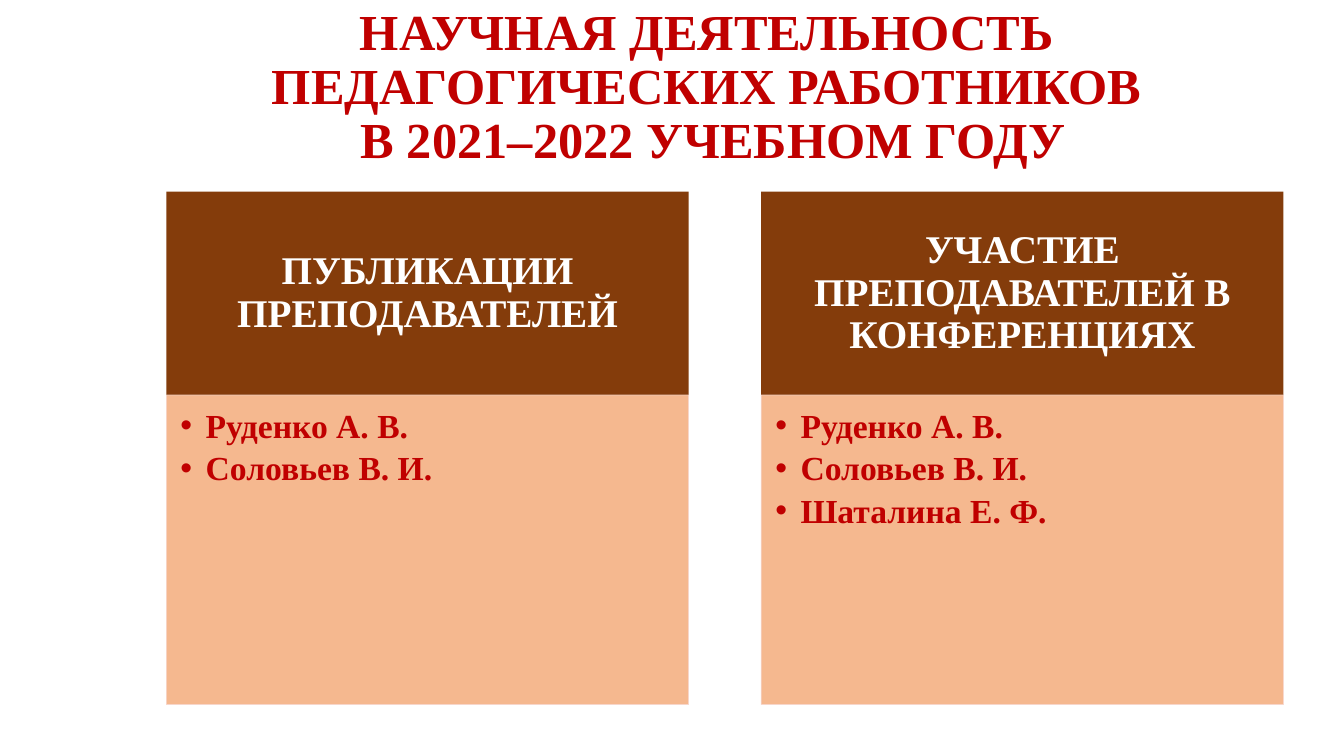
"""Slide listing the staff who publish and who speak at conferences."""
from lxml import etree
from pptx import Presentation
from pptx import util as u
from pptx.dml.color import RGBColor
from pptx.enum import shapes, text
from pptx.oxml.ns import qn

COLORS = {"red": "C00000", "brown": "843C0B", "peach": "F4B183",
          "edge": "F8D7CE", "white": "FFFFFF"}
FACE = "Times New Roman"
COLUMN_LEFT, COLUMN_STEP, COLUMN_WIDTH = 1.65, 5.9, 5.18
HEADING_TOP, HEADING_HEIGHT, NAMES_HEIGHT = 1.9, 2.02, 3.07
HEADING_INSETS = (0.22, 0.12, 0.22, 0.12)
NAMES_INSETS = (0.14, 0.14, 0.19, 0.21)
TITLE = ("НАУЧНАЯ ДЕЯТЕЛЬНОСТЬ \vПЕДАГОГИЧЕСКИХ РАБОТНИКОВ \v"
         "В 2021–2022 УЧЕБНОМ ГОДУ")
ACTIVITIES = [
    ("ПУБЛИКАЦИИ ПРЕПОДАВАТЕЛЕЙ", ["Руденко А. В.", "Соловьев В. И."]),
    ("УЧАСТИЕ ПРЕПОДАВАТЕЛЕЙ В КОНФЕРЕНЦИЯХ",
     ["Руденко А. В.", "Соловьев В. И.", "Шаталина Е. Ф."]),
]


def color(name):
    """Return a palette colour."""
    return RGBColor.from_string(COLORS[name])


def apply(target, values):
    """Set each attribute of the target from a dict."""
    for key, value in values.items():
        setattr(target, key, value)


def set_frame(frame, insets, anchor):
    """Set the insets and the vertical anchor of a text frame."""
    sides = ("margin_left", "margin_top", "margin_right", "margin_bottom")
    apply(frame, dict(zip(sides, map(u.Inches, insets))))
    apply(frame, {"word_wrap": True, "vertical_anchor": anchor,
                  "auto_size": text.MSO_AUTO_SIZE.NONE})


def write(paragraph, words, size, ink, align, after=0):
    """Fill a paragraph with bold words."""
    paragraph.text = words
    apply(paragraph, {"alignment": align, "line_spacing": 0.9,
                      "space_before": u.Pt(0), "space_after": u.Pt(after)})
    for run in paragraph.runs:
        apply(run.font, {"name": FACE, "size": u.Pt(size), "bold": True})
        run.font.color.rgb = color(ink)


def add_bullet(paragraph):
    """Give a paragraph a hanging round bullet."""
    properties = paragraph._p.get_or_add_pPr()
    properties.set("marL", str(u.Inches(0.25)))
    properties.set("indent", str(-u.Inches(0.25)))
    etree.SubElement(properties, qn("a:buFont")).set("typeface", "Arial")
    etree.SubElement(properties, qn("a:buChar")).set("char", "•")


def add_panel(slide, left, top, height, fill, edge=None):
    """Add one rectangle of a column, translucent when it has an edge."""
    panel = slide.shapes.add_shape(
        shapes.MSO_SHAPE.RECTANGLE,
        *map(u.Inches, (left, top, COLUMN_WIDTH, height)))
    panel.shadow.inherit = False
    panel.fill.solid()
    panel.fill.fore_color.rgb = color(fill)
    if edge:
        panel.line.color.rgb = color(edge)
        panel.line.width = u.Pt(0.5)
        for tint in panel._element.spPr.iter(qn("a:srgbClr")):
            etree.SubElement(tint, qn("a:alpha")).set("val", "90000")
    else:
        panel.line.fill.background()
    return panel


def add_activity(slide, column, heading, names):
    """Add a heading panel with its list of names below."""
    left = COLUMN_LEFT + column * COLUMN_STEP
    header = add_panel(slide, left, HEADING_TOP, HEADING_HEIGHT, "brown").text_frame
    set_frame(header, HEADING_INSETS, text.MSO_ANCHOR.MIDDLE)
    write(header.paragraphs[0], heading, 28, "white", text.PP_ALIGN.CENTER)

    people = add_panel(slide, left, HEADING_TOP + HEADING_HEIGHT,
                       NAMES_HEIGHT, "peach", "edge").text_frame
    set_frame(people, NAMES_INSETS, text.MSO_ANCHOR.TOP)
    for index, name in enumerate(names):
        entry = people.add_paragraph() if index else people.paragraphs[0]
        add_bullet(entry)
        write(entry, name, 24, "red", text.PP_ALIGN.LEFT, after=4.4)


def add_title(slide):
    """Place and write the slide title."""
    title = slide.shapes.title
    apply(title, {"left": u.Inches(0.45), "top": u.Inches(0.25),
                  "width": u.Inches(13.25), "height": u.Inches(1.25)})
    set_frame(title.text_frame, (0.1, 0.05, 0.1, 0.05), text.MSO_ANCHOR.MIDDLE)
    write(title.text_frame.paragraphs[0], TITLE, 36, "red", text.PP_ALIGN.CENTER)


def main():
    """Build and save the slide."""
    deck = Presentation()
    apply(deck, {"slide_width": u.Inches(13.33), "slide_height": u.Inches(7.5)})
    slide = deck.slides.add_slide(deck.slide_layouts[5])
    add_title(slide)
    for column, (heading, names) in enumerate(ACTIVITIES):
        add_activity(slide, column, heading, names)
    deck.save("out.pptx")


if __name__ == "__main__":
    main()
